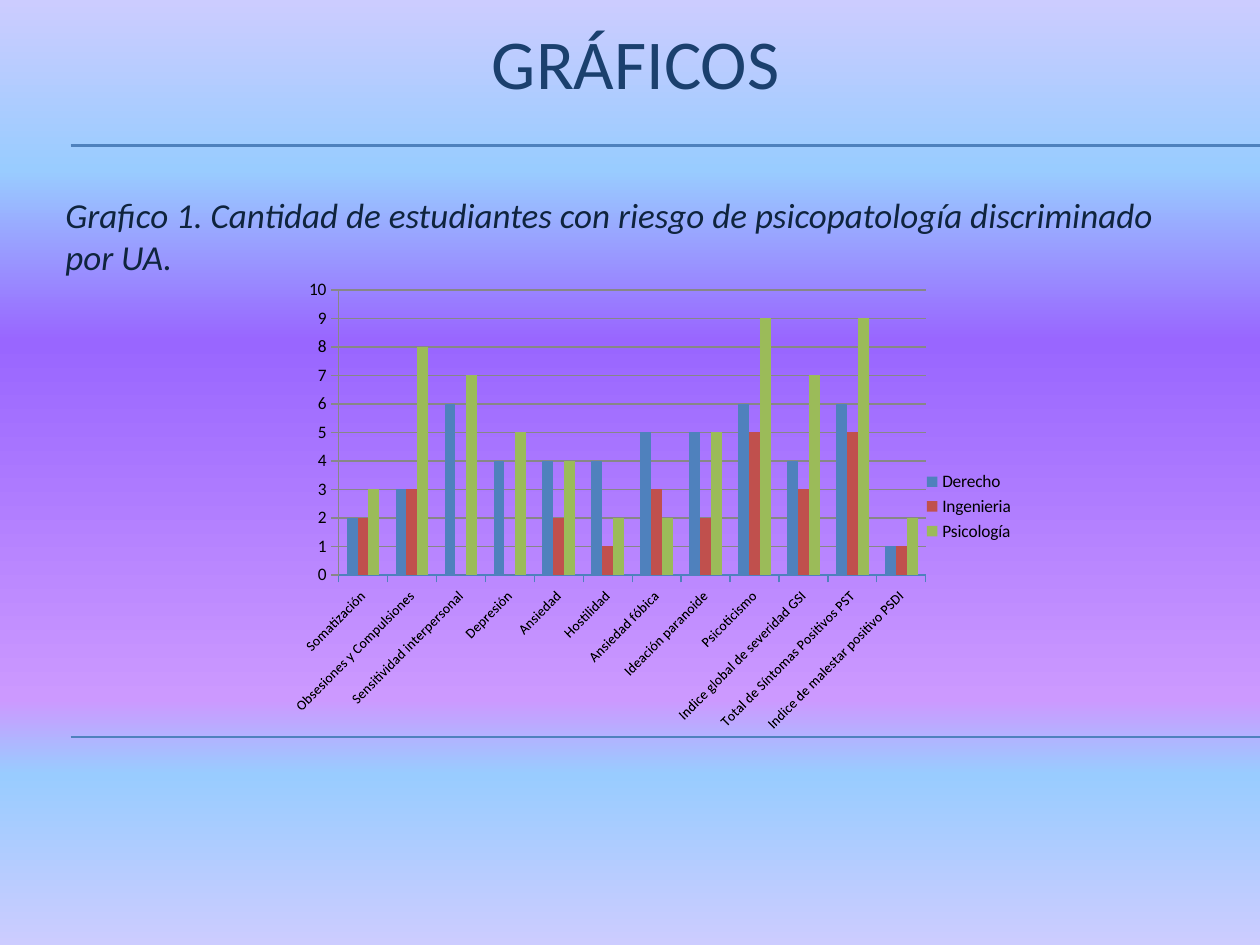
from lxml import etree
from pptx import Presentation
from pptx.chart.data import CategoryChartData
from pptx.dml.color import RGBColor
from pptx.enum.chart import XL_CHART_TYPE, XL_LEGEND_POSITION, XL_TICK_MARK
from pptx.enum.shapes import MSO_CONNECTOR
from pptx.enum.text import MSO_ANCHOR, PP_ALIGN
from pptx.oxml import parse_xml
from pptx.oxml.ns import nsdecls, qn
from pptx.util import Inches, Pt

COLUMNS = XL_CHART_TYPE.COLUMN_CLUSTERED
LEGEND_RIGHT = XL_LEGEND_POSITION.RIGHT
TICK_OUTSIDE = XL_TICK_MARK.OUTSIDE
STRAIGHT = MSO_CONNECTOR.STRAIGHT
MIDDLE, TOP = MSO_ANCHOR.MIDDLE, MSO_ANCHOR.TOP
CENTER, LEFT = PP_ALIGN.CENTER, PP_ALIGN.LEFT

FONT = "Calibri"
COLORS = {
    "title": "1B406E",
    "caption": "0F243E",
    "chart_text": "000000",
    "rule": "4F81BD",
    "grid": "878787",
    "Derecho": "4F81BD",
    "Ingenieria": "C0504D",
    "Psicología": "9BBB59",
}
BACKGROUND_STOPS = [
    (0, "CCCCFF"), (18, "99CCFF"), (36, "9966FF"),
    (74, "CC99FF"), (82, "99CCFF"), (100, "CCCCFF"),
]
RISK_COUNTS = [
    ("Somatización", 2, 2, 3),
    ("Obsesiones y Compulsiones", 3, 3, 8),
    ("Sensitividad interpersonal", 6, 0, 7),
    ("Depresión", 4, 0, 5),
    ("Ansiedad", 4, 2, 4),
    ("Hostilidad", 4, 1, 2),
    ("Ansiedad fóbica", 5, 3, 2),
    ("Ideación paranoide", 5, 2, 5),
    ("Psicoticismo", 6, 5, 9),
    ("Indice global de severidad GSI", 4, 3, 7),
    ("Total de Síntomas Positivos PST", 6, 5, 9),
    ("Indice de malestar positivo PSDI", 1, 1, 2),
]
FACULTIES = ["Derecho", "Ingenieria", "Psicología"]
PLOT_AREA = {"x": 0.053, "y": 0.033, "w": 0.808, "h": 0.615}


def color(name):
    return RGBColor.from_string(COLORS[name])


class SlideBuilder:
    def __init__(self, slide):
        self.slide = slide

    def background(self, stops):
        fill = self.slide.background.fill
        fill.gradient()
        fill.gradient_angle = 270
        stop_list = self.slide._element.find(".//" + qn("a:gsLst"))
        for stop in list(stop_list):
            stop_list.remove(stop)
        for position, value in stops:
            stop = etree.SubElement(stop_list, qn("a:gs"), pos=str(position * 1000))
            etree.SubElement(stop, qn("a:srgbClr"), val=value)

    def rule(self, top):
        line = self.slide.shapes.add_connector(
            STRAIGHT, Inches(0.56), Inches(top), Inches(10), Inches(top))
        line.line.color.rgb = color("rule")
        line.line.width = Pt(0.75)
        etree.SubElement(line._element.spPr, qn("a:effectLst"))

    def set_text(self, shape, text, style, size, alignment, anchor, italic=False):
        frame = shape.text_frame
        frame.word_wrap = True
        frame.vertical_anchor = anchor
        paragraph = frame.paragraphs[0]
        paragraph.text = text
        paragraph.alignment = alignment
        font = paragraph.font
        font.name, font.size, font.italic = FONT, Pt(size), italic
        font.color.rgb = color(style)

    def title(self, text, left, top, width, height):
        shape = self.slide.shapes.title
        shape.left, shape.top = Inches(left), Inches(top)
        shape.width, shape.height = Inches(width), Inches(height)
        self.set_text(shape, text, "title", 40, CENTER, MIDDLE)

    def caption(self, text, left, top, width, height):
        shape = self.slide.shapes.add_textbox(
            Inches(left), Inches(top), Inches(width), Inches(height))
        self.set_text(shape, text, "caption", 20, LEFT, TOP, italic=True)

    def column_chart(self, rows, names, left, top, width, height):
        data = CategoryChartData()
        data.categories = [row[0] for row in rows]
        for index, name in enumerate(names, start=1):
            data.add_series(name, [row[index] for row in rows])
        chart = self.slide.shapes.add_chart(
            COLUMNS, Inches(left), Inches(top), Inches(width), Inches(height), data).chart
        chart.has_title = False
        chart.font.name, chart.font.size = FONT, Pt(10)
        chart.font.color.rgb = color("chart_text")
        chart.has_legend = True
        chart.legend.position = LEGEND_RIGHT
        chart.legend.include_in_layout = False
        plot = chart.plots[0]
        plot.gap_width, plot.overlap = 150, 0
        plot.vary_by_categories = False
        for series in plot.series:
            series.format.fill.solid()
            series.format.fill.fore_color.rgb = color(series.name)
        self.axes(chart)
        self.plot_layout(chart)

    def axes(self, chart):
        category_axis, value_axis = chart.category_axis, chart.value_axis
        category_axis.tick_labels.font.size = Pt(8)
        category_axis.tick_labels.font.name = FONT
        value_axis.minimum_scale, value_axis.maximum_scale = 0, 10
        value_axis.major_unit = 1
        value_axis.has_major_gridlines = True
        for axis in (category_axis, value_axis):
            axis.major_tick_mark = TICK_OUTSIDE
        for line, name in (
            (category_axis.format.line, "rule"),
            (value_axis.format.line, "grid"),
            (value_axis.major_gridlines.format.line, "grid"),
        ):
            line.color.rgb = color(name)
            line.width = Pt(0.75)

    def plot_layout(self, chart):
        plot_area = chart._chartSpace.chart.plotArea
        for layout in plot_area.findall(qn("c:layout")):
            plot_area.remove(layout)
        sizes = "".join(f'<c:{key} val="{value}"/>' for key, value in PLOT_AREA.items())
        plot_area.insert(0, parse_xml(
            f'<c:layout {nsdecls("c")}><c:manualLayout><c:layoutTarget val="inner"/>'
            f'<c:xMode val="edge"/><c:yMode val="edge"/>{sizes}'
            '</c:manualLayout></c:layout>'))


def main():
    presentation = Presentation()
    presentation.slide_width, presentation.slide_height = Inches(10), Inches(7.5)
    builder = SlideBuilder(presentation.slides.add_slide(presentation.slide_layouts[5]))
    builder.background(BACKGROUND_STOPS)
    for top in (1.15, 1.16, 5.85):
        builder.rule(top)
    builder.title("GRÁFICOS", 0.42, 0.09, 9.25, 0.8)
    builder.caption(
        "Grafico 1. Cantidad de estudiantes con riesgo de psicopatología "
        "discriminado por UA.", 0.42, 1.49, 9.25, 0.8)
    builder.column_chart(RISK_COUNTS, FACULTIES, 2.32, 2.18, 5.83, 3.68)
    presentation.save("out.pptx")


if __name__ == "__main__":
    main()
